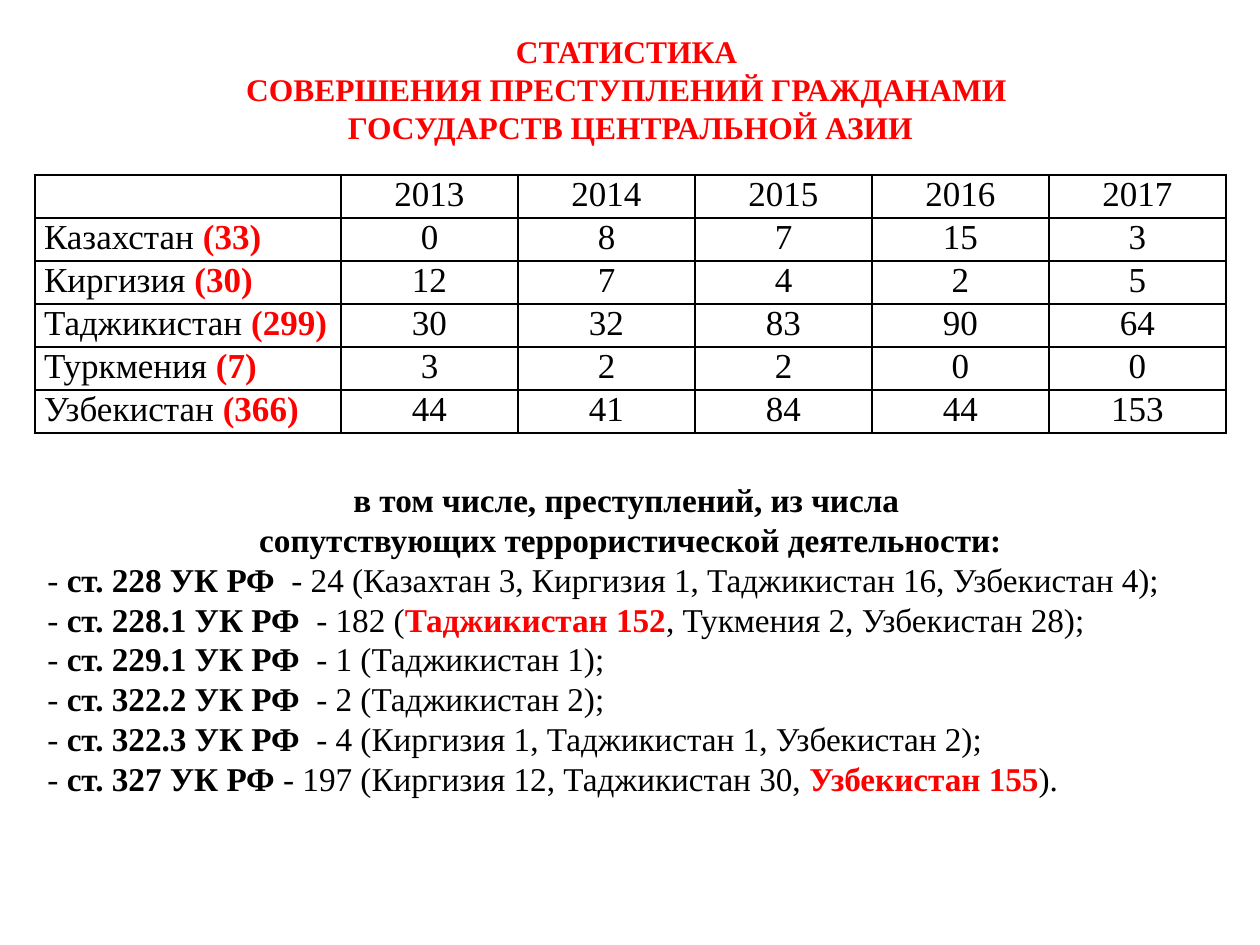
from lxml.etree import SubElement as Sub
from pptx import Presentation
from pptx.dml.color import RGBColor
from pptx.enum.text import MSO_AUTO_SIZE as Fit, PP_ALIGN as Align
from pptx.oxml.ns import qn
from pptx.util import Pt

FONT = "Times New Roman"
BLACK, RED = "000000", "FF0000"
LEFT, WIDE = 35, 1191
ROW, COL = 43, 177

TITLE = [
    "СТАТИСТИКА ",
    "СОВЕРШЕНИЯ ПРЕСТУПЛЕНИЙ ГРАЖДАНАМИ ",
    "ГОСУДАРСТВ ЦЕНТРАЛЬНОЙ АЗИИ",
]
YEARS = ["2013", "2014", "2015", "2016", "2017"]
STATES = [
    ("Казахстан ", 33, [0, 8, 7, 15, 3]),
    ("Киргизия ", 30, [12, 7, 4, 2, 5]),
    ("Таджикистан ", 299, [30, 32, 83, 90, 64]),
    ("Туркмения ", 7, [3, 2, 2, 0, 0]),
    ("Узбекистан ", 366, [44, 41, 84, 44, 153]),
]
HEAD = [
    "в том числе, преступлений, из числа ",
    "сопутствующих террористической деятельности:",
]
CRIMES = [
    ("ст. 228 УК РФ ", " - 24 (Казахтан 3, Киргизия 1, Таджикистан 16, Узбекистан 4);", "", ""),
    ("ст. 228.1 УК РФ ", " - 182 (", "Таджикистан 152", ", Тукмения 2, Узбекистан 28);"),
    ("ст. 229.1 УК РФ ", " - 1 (Таджикистан 1);", "", ""),
    ("ст. 322.2 УК РФ ", " - 2 (Таджикистан 2);", "", ""),
    ("ст. 322.3 УК РФ ", " - 4 (Киргизия 1, Таджикистан 1, Узбекистан 2);", "", ""),
    ("ст. 327 УК РФ", " - 197 (Киргизия 12, Таджикистан 30, ", "Узбекистан 155", ")."),
]


def px(n):
    return round(n * 914400 / 126)


def tint(code):
    return RGBColor.from_string(code)


def write(para, text, size=20, color=BLACK, bold=False, align=Align.LEFT):
    para.alignment = align
    if text:
        run = para.add_run()
        run.text = text
        font = run.font
        font.name, font.size, font.bold = FONT, Pt(size), bold
        font.color.rgb = tint(color)


def add_box(slide, top, high):
    box = slide.shapes.add_textbox(px(LEFT), px(top), px(WIDE), px(high))
    frame = box.text_frame
    frame.word_wrap = True
    frame.auto_size = Fit.SHAPE_TO_FIT_TEXT
    return frame


def add_paras(frame, count):
    return [frame.paragraphs[0]] + [frame.add_paragraph() for _ in range(count - 1)]


def add_title(slide):
    frame = add_box(slide, 26, 127)
    for para, line in zip(add_paras(frame, len(TITLE)), TITLE):
        write(para, line, size=18, color=RED, bold=True, align=Align.CENTER)


def style_cell(cell):
    cell.margin_left = cell.margin_right = px(9)
    cell.margin_top = cell.margin_bottom = 0
    props = cell._tc.get_or_add_tcPr()
    for side in ("lnL", "lnR", "lnT", "lnB"):
        line = Sub(props, qn(f"a:{side}"), w=str(Pt(1)))
        fill = Sub(line, qn("a:solidFill"))
        Sub(fill, qn("a:srgbClr"), val=BLACK)
    cell.fill.background()


def add_grid(slide):
    rows, cols = len(STATES) + 1, len(YEARS) + 1
    table = slide.shapes.add_table(
        rows, cols, px(LEFT), px(175), px(WIDE), px(ROW * rows)
    ).table
    table.first_row = table.horz_banding = False
    for row in table.rows:
        row.height = px(ROW)
    for col in table.columns:
        col.width = px(COL)
    table.columns[0].width = px(WIDE - COL * len(YEARS))
    for cell in table.iter_cells():
        style_cell(cell)
    data = [YEARS] + [nums for _, _, nums in STATES]
    for r, nums in enumerate(data):
        for c, num in enumerate(nums, 1):
            write(table.cell(r, c).text_frame.paragraphs[0], str(num), align=Align.CENTER)
    for r, (name, total, _) in enumerate(STATES, 1):
        para = table.cell(r, 0).text_frame.paragraphs[0]
        write(para, name)
        write(para, f"({total})", color=RED, bold=True)


def add_crimes(slide):
    frame = add_box(slide, 473, 335)
    paras = add_paras(frame, len(HEAD) + len(CRIMES))
    for para, line in zip(paras, HEAD):
        write(para, line, size=19, bold=True, align=Align.CENTER)
    for para, (law, text, peak, rest) in zip(paras[len(HEAD):], CRIMES):
        write(para, "- ", size=19)
        write(para, law, size=19, bold=True)
        write(para, text, size=19)
        write(para, peak, size=19, color=RED, bold=True)
        write(para, rest, size=19)


def main():
    deck = Presentation()
    deck.slide_width, deck.slide_height = px(1260), px(945)
    slide = deck.slides.add_slide(deck.slide_layouts[6])
    add_title(slide)
    add_grid(slide)
    add_crimes(slide)
    deck.save("out.pptx")


if __name__ == "__main__":
    main()
